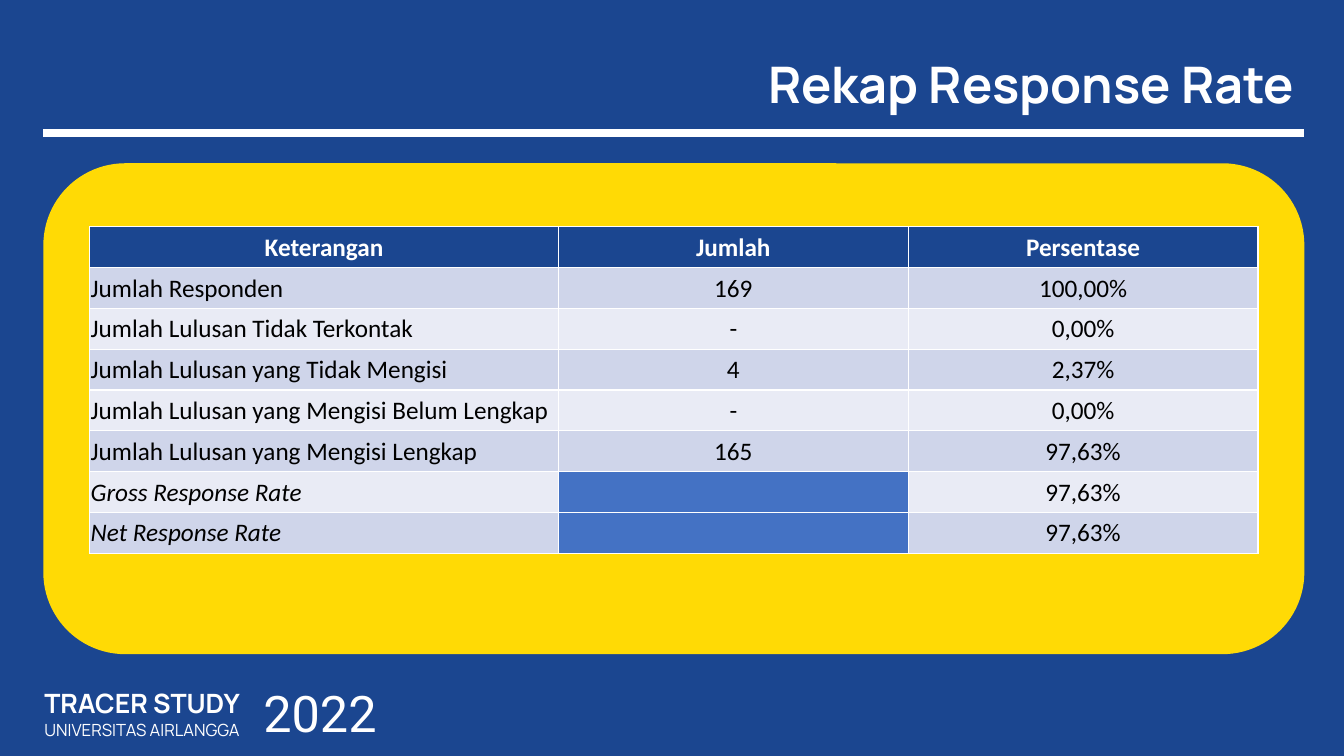
from lxml import etree
from pptx import Presentation
from pptx import util as u
from pptx.dml.color import RGBColor
from pptx.enum import shapes, text
from pptx.oxml.ns import qn

NAVY, YELLOW, WHITE, BLACK = "1B4690", "FFDA05", "FFFFFF", "000000"
BANDS, EMPTY = ("E9EBF5", "CFD5EA"), "4472C4"
LEFT, WIDTH = u.Inches(0.43), u.Inches(12.51)
RULE_Y = u.Inches(1.32)
ROW_H = u.Inches(0.405)


def paint(fill, color):
    fill.solid()
    fill.fore_color.rgb = RGBColor.from_string(color)


def style(p, align, size, font, color, bold=False, italic=False):
    """Align a paragraph and format all of its runs."""
    p.alignment = align
    for r in p.runs:
        r.font.size, r.font.name = u.Pt(size), font
        r.font.bold, r.font.italic = bold, italic
        r.font.color.rgb = RGBColor.from_string(color)


prs = Presentation()
prs.slide_width, prs.slide_height = u.Inches(13.333), u.Inches(7.5)
s = prs.slides.add_slide(prs.slide_layouts[5])
paint(s.background.fill, NAVY)

# Yellow panel and white rule
panel = s.shapes.add_shape(shapes.MSO_SHAPE.ROUNDED_RECTANGLE,
                           LEFT, u.Inches(1.62), WIDTH, u.Inches(4.87))
panel.shadow.inherit = False
paint(panel.fill, YELLOW)
panel.line.fill.background()

rule = s.shapes.add_connector(shapes.MSO_CONNECTOR.STRAIGHT,
                              LEFT, RULE_Y, LEFT + WIDTH, RULE_Y)
rule.line.width = u.Pt(6)
paint(rule.line.fill, WHITE)
etree.SubElement(rule._element.spPr, qn("a:effectLst"))

# Title
title = s.shapes.title
title.left, title.top, title.width, title.height = LEFT, u.Inches(0.41), WIDTH, u.Inches(0.91)
tf = title.text_frame
tf.text = "Rekap Response Rate"
tf.vertical_anchor = text.MSO_ANCHOR.MIDDLE
tf.paragraphs[0].line_spacing = 0.9
style(tf.paragraphs[0], text.PP_ALIGN.RIGHT, 36, "Manrope", WHITE, bold=True)

# Footer: text, size, font, bold for each line
footers = [
    ((0.31, 6.77, 2.2, 0.62), [("TRACER STUDY", 19, "Manrope", True),
                               ("UNIVERSITAS AIRLANGGA", 12, "Manrope", False)]),
    ((2.39, 6.72, 1.57, 0.71), [("2022", 36, "Roboto", False)]),
]
for box, lines in footers:
    tf = s.shapes.add_textbox(*map(u.Inches, box)).text_frame
    tf.word_wrap = False
    tf.auto_size = text.MSO_AUTO_SIZE.SHAPE_TO_FIT_TEXT
    tf.text = "\n".join(line[0] for line in lines)
    for p, (_, size, font, bold) in zip(tf.paragraphs, lines):
        style(p, text.PP_ALIGN.CENTER, size, font, WHITE, bold)

# Response table
rows = [
    ("Keterangan", "Jumlah", "Persentase"),
    ("Jumlah Responden", "169", "100,00%"),
    ("Jumlah Lulusan Tidak Terkontak", "-", "0,00%"),
    ("Jumlah Lulusan yang Tidak Mengisi", "4", "2,37%"),
    ("Jumlah Lulusan yang Mengisi Belum Lengkap", "-", "0,00%"),
    ("Jumlah Lulusan yang Mengisi Lengkap", "165", "97,63%"),
    ("Gross Response Rate", "", "97,63%"),
    ("Net Response Rate", "", "97,63%"),
]
table = s.shapes.add_table(len(rows), 3, u.Inches(0.89), u.Inches(2.25),
                           u.Inches(11.59), ROW_H * len(rows)).table
for column, width in zip(table.columns, (4.65, 3.47, 3.47)):
    column.width = u.Inches(width)
for i, row in enumerate(rows):
    table.rows[i].height = ROW_H
    header = i == 0
    for j, value in enumerate(row):
        cell = table.cell(i, j)
        if not value:
            paint(cell.fill, EMPTY)
            continue
        paint(cell.fill, NAVY if header else BANDS[i % 2])
        cell.margin_left = cell.margin_right = cell.margin_top = u.Inches(0.01)
        cell.margin_bottom = 0
        cell.vertical_anchor = text.MSO_ANCHOR.MIDDLE
        cell.text = value
        align = text.PP_ALIGN.CENTER if header or j else text.PP_ALIGN.LEFT
        style(cell.text_frame.paragraphs[0], align, 18, "Calibri",
              WHITE if header else BLACK, bold=header,
              italic=j == 0 and value.endswith("Response Rate"))

prs.save("out.pptx")
